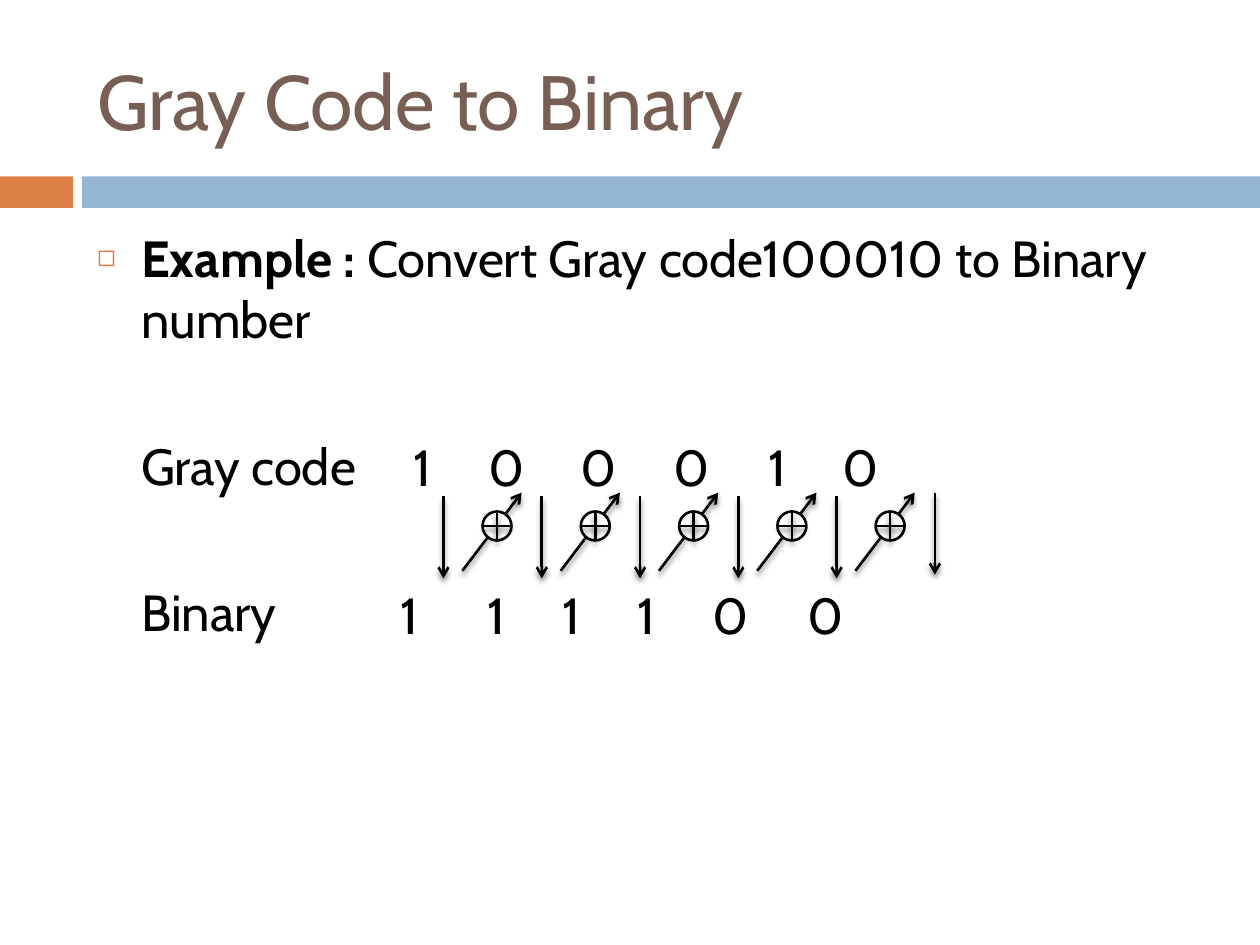
"""Build a slide that converts a Gray code to binary with XOR arrows."""
from dataclasses import dataclass

from lxml import etree
from pptx import Presentation
from pptx.dml.color import RGBColor
from pptx.enum.shapes import MSO_CONNECTOR, MSO_SHAPE
from pptx.enum.text import MSO_ANCHOR, MSO_AUTO_SIZE, PP_ALIGN
from pptx.oxml.ns import qn
from pptx.util import Inches, Pt

STRAIGHT = MSO_CONNECTOR.STRAIGHT
RECTANGLE, OVAL = MSO_SHAPE.RECTANGLE, MSO_SHAPE.OVAL
MIDDLE, TOP = MSO_ANCHOR.MIDDLE, MSO_ANCHOR.TOP
LEFT, CENTER = PP_ALIGN.LEFT, PP_ALIGN.CENTER
NO_AUTOFIT = MSO_AUTO_SIZE.NONE

INDENT = 0.35
FIRST_ARROW, ARROW_STEP = 3.52, 0.78
ARROW_TOP, ARROW_LENGTH = 3.94, 0.65
XOR_TOP, XOR_SIZE = 4.06, 0.23
DIGIT_WIDTH, DIGIT_HEIGHT = 0.4, 0.49
DIGIT_ROWS = [
    ("Gray code", "100010", 3.46, (3.35, 4.02, 4.75, 5.49, 6.17, 6.83)),
    ("Binary", "111100", 4.63, (3.25, 3.94, 4.54, 5.13, 5.8, 6.55)),
]


@dataclass(frozen=True)
class Theme:
    font: str = "Cabin"
    title_size: int = 44
    body_size: int = 29
    title: str = "775F55"
    text: str = "000000"
    paper: str = "FFFFFF"
    accent: str = "DD8047"
    band: str = "94B6D2"
    line_width: float = 1.5
    paragraph_gap: int = 7
    row_gap: int = 49


def add_xml(parent, tag, **attributes):
    return etree.SubElement(parent, qn(tag), {k: str(v) for k, v in attributes.items()})


class SlideBuilder:
    """Hold the theme and the current slide, and draw its elements."""

    def __init__(self, slide, theme):
        self.slide = slide
        self.theme = theme

    def placeholder(self, index, box, anchor):
        shape = self.slide.placeholders[index]
        shape.left, shape.top, shape.width, shape.height = map(Inches, box)
        frame = shape.text_frame
        frame.word_wrap = True
        frame.auto_size = NO_AUTOFIT
        frame.vertical_anchor = anchor
        return frame

    def style_runs(self, paragraph, size, color):
        for run in paragraph.runs:
            run.font.name = self.theme.font
            run.font.size = Pt(size)
            run.font.color.rgb = RGBColor.from_string(color)

    def title(self, text, box):
        frame = self.placeholder(0, box, MIDDLE)
        frame.text = text
        paragraph = frame.paragraphs[0]
        paragraph.alignment = LEFT
        self.style_runs(paragraph, self.theme.title_size, self.theme.title)

    def body_paragraph(self, paragraph, text, gap, first_indent):
        paragraph.text = text
        self.style_runs(paragraph, self.theme.body_size, self.theme.text)
        paragraph.space_before = Pt(gap)
        properties = paragraph._p.get_or_add_pPr()
        properties.set("marL", str(Inches(INDENT)))
        properties.set("indent", str(Inches(first_indent)))
        return properties

    def bullet(self, paragraph, lead, text):
        properties = self.body_paragraph(paragraph, lead, self.theme.paragraph_gap, -INDENT)
        paragraph.add_run().text = text
        self.style_runs(paragraph, self.theme.body_size, self.theme.text)
        paragraph.runs[0].font.bold = True
        add_xml(add_xml(properties, "a:buClr"), "a:srgbClr", val=self.theme.accent)
        add_xml(properties, "a:buSzPct", val=60000)
        add_xml(properties, "a:buChar", char="◻")

    def row_label(self, paragraph, label):
        properties = self.body_paragraph(paragraph, label, self.theme.row_gap, 0)
        add_xml(properties, "a:buNone")

    def digit(self, text, center, top):
        box = (center - DIGIT_WIDTH / 2, top, DIGIT_WIDTH, DIGIT_HEIGHT)
        frame = self.slide.shapes.add_textbox(*map(Inches, box)).text_frame
        frame.margin_left = frame.margin_right = frame.margin_top = frame.margin_bottom = 0
        frame.word_wrap = True
        frame.text = text
        paragraph = frame.paragraphs[0]
        paragraph.alignment = CENTER
        self.style_runs(paragraph, self.theme.body_size, self.theme.text)

    def shape(self, shapes, kind, box, fill, outline=None):
        shape = shapes.add_shape(kind, *map(Inches, box))
        shape.shadow.inherit = False
        shape.fill.solid()
        shape.fill.fore_color.rgb = RGBColor.from_string(fill)
        if outline:
            shape.line.color.rgb = RGBColor.from_string(outline)
            shape.line.width = Pt(self.theme.line_width)
        else:
            shape.line.fill.background()

    def line(self, shapes, start, end, arrow=False):
        connector = shapes.add_connector(STRAIGHT, *map(Inches, (*start, *end)))
        connector.line.color.rgb = RGBColor.from_string(self.theme.text)
        connector.line.width = Pt(self.theme.line_width)
        if arrow:
            add_xml(connector.line._get_or_add_ln(), "a:tailEnd", type="arrow")
        effects = add_xml(connector._element.spPr, "a:effectLst")
        shadow = add_xml(effects, "a:outerShdw", blurRad=Pt(3), dist=Pt(2.4),
                         dir=5400000, rotWithShape=0)
        color = add_xml(shadow, "a:srgbClr", val=self.theme.text)
        add_xml(color, "a:alpha", val=45000)

    def down_arrow(self, x, top):
        self.line(self.slide.shapes, (x, top), (x, top + ARROW_LENGTH), arrow=True)

    def xor_arrow(self, x):
        shapes = self.slide.shapes.add_group_shape().shapes
        self.line(shapes, (x + 0.15, 4.53), (x + 0.62, 3.91), arrow=True)
        left, half = x + 0.31, XOR_SIZE / 2
        self.shape(shapes, OVAL, (left, XOR_TOP, XOR_SIZE, XOR_SIZE),
                   self.theme.paper, self.theme.text)
        self.line(shapes, (left + half, XOR_TOP), (left + half, XOR_TOP + XOR_SIZE))
        self.line(shapes, (left, XOR_TOP + half), (left + XOR_SIZE, XOR_TOP + half))


def main():
    presentation = Presentation()
    presentation.slide_width, presentation.slide_height = Inches(10), Inches(7.5)
    theme = Theme()
    slide = presentation.slides.add_slide(presentation.slide_layouts[1])
    builder = SlideBuilder(slide, theme)

    builder.shape(slide.shapes, RECTANGLE, (0, 1.4, 0.58, 0.25), theme.accent)
    builder.shape(slide.shapes, RECTANGLE, (0.65, 1.4, 9.35, 0.25), theme.band)
    builder.title("Gray Code to Binary", (0.67, 0.25, 8.92, 1.08))

    body = builder.placeholder(1, (0.67, 1.75, 8.92, 4.92), TOP)
    builder.bullet(body.paragraphs[0], "Example : ",
                   "Convert Gray code100010 to Binary number")
    for label, digits, top, centers in DIGIT_ROWS:
        builder.row_label(body.add_paragraph(), label)
        for digit, center in zip(digits, centers):
            builder.digit(digit, center, top)

    last = len(DIGIT_ROWS[0][1]) - 1
    for index in range(last):
        x = FIRST_ARROW + index * ARROW_STEP
        builder.down_arrow(x, ARROW_TOP)
        builder.xor_arrow(x)
    builder.down_arrow(FIRST_ARROW + last * ARROW_STEP, ARROW_TOP - 0.03)

    presentation.save("out.pptx")


if __name__ == "__main__":
    main()
